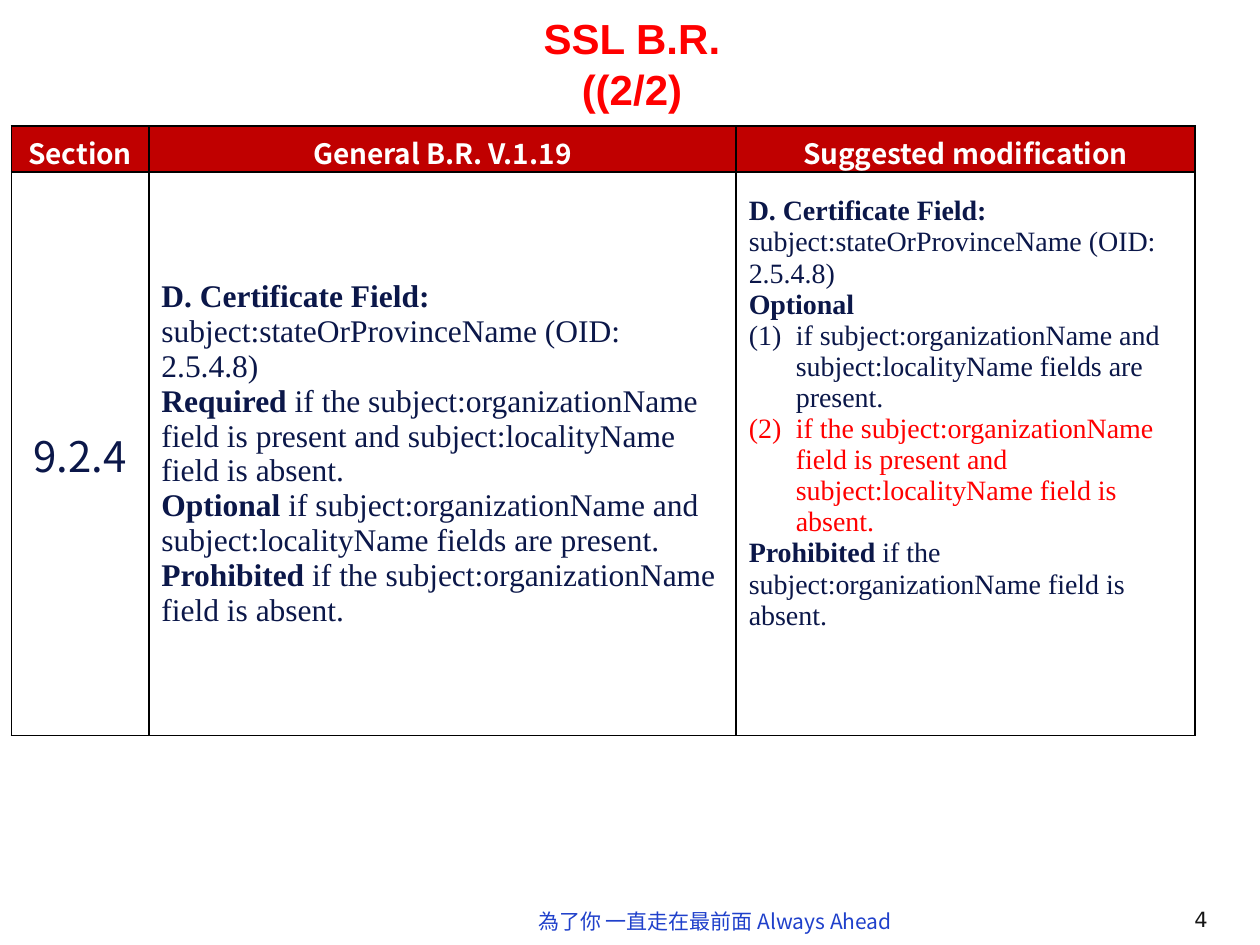
from pptx import Presentation
from pptx.dml.color import RGBColor as RGB
from pptx.enum.text import MSO_ANCHOR as Anchor, PP_ALIGN as Align
from pptx.oxml.ns import qn
from pptx.util import Cm, Pt
from lxml.etree import SubElement as Sub

# Content: each paragraph is a kind and its (text, bold) runs
TITLE = "SSL B.R.\v((2/2)"
SLOGAN = "為了你 一直走在最前面 Always Ahead"
PAGE = "4"
HEADS = ["Section", "General B.R. V.1.19", "Suggested modification"]
FIELD = [("D. Certificate Field: ", True),
         ("subject:stateOrProvinceName (OID: 2.5.4.8)", False)]
BOTH = "if subject:organizationName and subject:localityName fields are present."
LACK = ("if the subject:organizationName field is present and "
        "subject:localityName field is absent.")
BAN = [("Prohibited", True),
       (" if the subject:organizationName field is absent.", False)]
RULE = [("section", [("9.2.4", False)])]
OLD = [
    ("old", FIELD),
    ("old", [("Required", True), (" " + LACK, False)]),
    ("old", [("Optional", True), (" " + BOTH, False)]),
    ("old", BAN),
]
NEW = [
    ("new", FIELD),
    ("new", [("Optional", True)]),
    ("item", [(BOTH, False)]),
    ("change", [(LACK, False)]),
    ("new", BAN),
]

# Theme: font, size, colour, alignment
SANS, SERIF = "Noto Sans CJK SC", "Times New Roman"
NAVY, RED = "0B1749", "FF0000"
THEME = {
    "title": ("Arial", 24, RED, Align.CENTER),
    "head": (SANS, 16, "FFFFFF", Align.CENTER),
    "section": (SANS, 24, NAVY, Align.CENTER),
    "old": (SERIF, 18, NAVY, Align.LEFT),
    "new": (SERIF, 16, NAVY, Align.LEFT),
    "item": (SERIF, 16, NAVY, Align.LEFT),
    "change": (SERIF, 16, RED, Align.LEFT),
    "slogan": (SANS, 12, "1F40CB", Align.JUSTIFY),
    "page": ("DejaVu Sans", 12, "161616", Align.LEFT),
}
BAR, PAPER, RULING = "C00000", "FFFFFF", "000000"
COLS = [2.77, 11.84, 9.25]
ROWS = [0.93, 11.1]
HANG = Cm(0.95)


def number(para):
    prop = para._p.get_or_add_pPr()
    prop.set("marL", str(HANG))
    prop.set("indent", str(-HANG))
    Sub(prop, qn("a:buFont"), typeface="+mj-lt")
    Sub(prop, qn("a:buAutoNum"), type="arabicParenBoth")


def write(frame, paras):
    for i, (kind, runs) in enumerate(paras):
        para = frame.add_paragraph() if i else frame.paragraphs[0]
        face, size, tint, para.alignment = THEME[kind]
        if kind in ("item", "change"):
            number(para)
        font = para.font
        font.name, font.size = face, Pt(size)
        font.color.rgb = RGB.from_string(tint)
        Sub(font._element, qn("a:ea"), typeface=face)
        for text, bold in runs:
            for j, part in enumerate(text.split("\v")):
                if j:
                    para.add_line_break()
                run = para.add_run()
                run.text, run.font.bold = part, bold


def label(slide, box, kind, text, bold=False):
    frame = slide.shapes.add_textbox(*map(Cm, box)).text_frame
    frame.word_wrap = True
    write(frame, [(kind, [(text, bold)])])


def border(cell):
    prop = cell._tc.get_or_add_tcPr()
    for i, side in enumerate(("lnL", "lnR", "lnT", "lnB")):
        line = prop.makeelement(qn("a:" + side), {"w": str(Pt(1))})
        fill = Sub(line, qn("a:solidFill"))
        Sub(fill, qn("a:srgbClr"), val=RULING)
        prop.insert(i, line)


def main():
    deck = Presentation()
    deck.slide_width, deck.slide_height = Cm(25.4), Cm(19.05)
    slide = deck.slides.add_slide(deck.slide_layouts[6])

    # Footer
    label(slide, (23.83, 18.16, 1.5, 0.76), "page", PAGE)
    label(slide, (10.6, 18.2, 8.23, 0.76), "slogan", SLOGAN)

    # Comparison table
    size = map(Cm, (0.23, 2.54, sum(COLS), sum(ROWS)))
    table = slide.shapes.add_table(len(ROWS), len(COLS), *size).table
    table.first_row = table.horz_banding = False
    for col, wide in zip(table.columns, COLS):
        col.width = Cm(wide)
    for row, high in zip(table.rows, ROWS):
        row.height = Cm(high)
    heads = [[("head", [(text, True)])] for text in HEADS]
    for r, line in enumerate([heads, [RULE, OLD, NEW]]):
        for c, paras in enumerate(line):
            cell = table.cell(r, c)
            cell.vertical_anchor = Anchor.MIDDLE
            cell.fill.solid()
            cell.fill.fore_color.rgb = RGB.from_string(PAPER if r else BAR)
            border(cell)
            write(cell.text_frame, paras)
            if r == 0:
                cell.margin_bottom = 0
    # The suggestion sits above the middle of its cell
    table.cell(1, 2).margin_bottom = Cm(1.75)

    # Title
    label(slide, (9.73, 0.13, 6.02, 2.31), "title", TITLE, True)
    deck.save("out.pptx")


if __name__ == "__main__":
    main()
